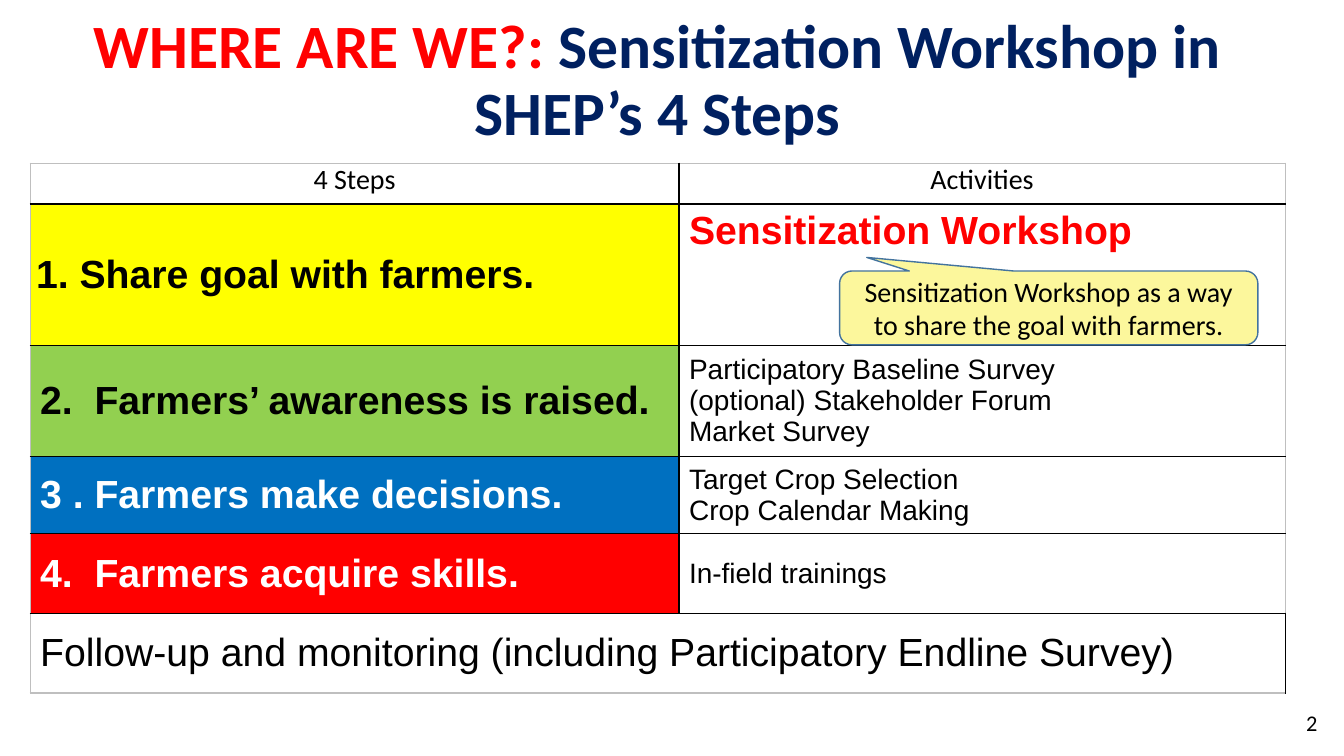
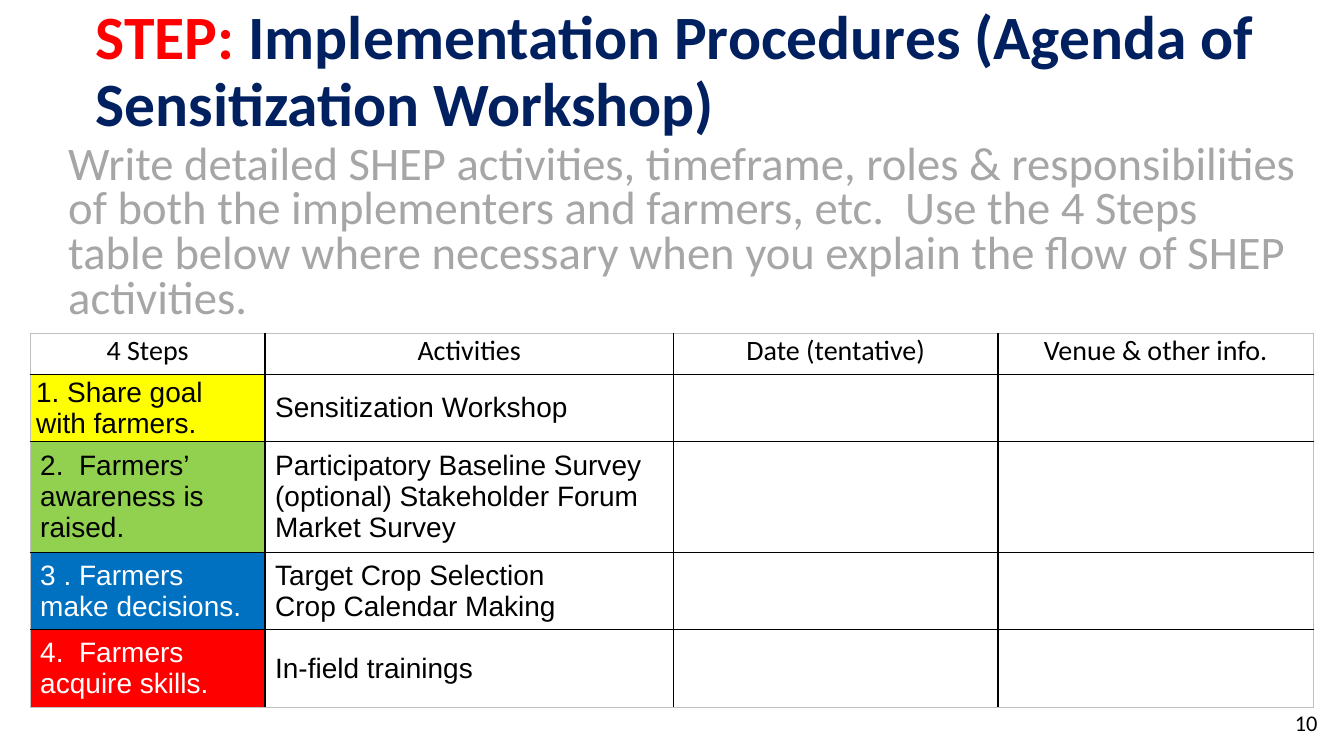
from lxml.etree import SubElement
from pptx import Presentation
from pptx.dml.color import RGBColor
from pptx.enum.shapes import MSO_SHAPE as SHAPE
from pptx.enum.text import MSO_ANCHOR as ANCHOR, PP_ALIGN as ALIGN
from pptx.oxml.ns import qn
from pptx.util import Cm, Pt

# Shared look
COLORS = {
    "black": "000000", "white": "FFFFFF", "red": "FF0000", "navy": "002060",
    "yellow": "FFFF00", "green": "92D050", "blue": "0070C0", "gray": "A6A6A6",
    "edge": "BFBFBF", "note": "FCF79C", "note_line": "43739E",
}
TITLE = {"name": "Calibri", "size": Pt(44), "bold": True}
PROMPT = {"name": "Calibri", "size": Pt(33.3), "bold": False}
LABEL = {"name": "Calibri", "size": Pt(20), "bold": False}
NUMBER = {"name": "Calibri", "size": Pt(16), "bold": False}
BODY = {"name": "Arial", "size": Pt(20), "bold": False}
STRONG = {"name": "Arial", "size": Pt(28), "bold": True}
LARGE = {"name": "Arial", "size": Pt(28), "bold": False}
TIGHT = {"margin_left": Cm(0.15), "margin_right": Cm(0.15),
         "margin_top": 0, "margin_bottom": 0}

# The four steps: text, fill, text colour, activities
STEPS = [
    ("1. Share goal with farmers.", "yellow", "black",
     ["Sensitization Workshop"]),
    ("2.  Farmers’ awareness is raised.", "green", "black",
     ["Participatory Baseline Survey", "(optional) Stakeholder Forum",
      "Market Survey"]),
    ("3 . Farmers make decisions.", "blue", "white",
     ["Target Crop Selection", "Crop Calendar Making"]),
    ("4.  Farmers acquire skills.", "red", "white", ["In-field trainings"]),
]


def rgb(name):
    return RGBColor.from_string(COLORS[name])


def set_attrs(target, values):
    for key, value in values.items():
        setattr(target, key, value)


def add_run(p, text, font, color="black"):
    r = p.add_run()
    r.text = text
    set_attrs(r.font, font)
    r.font.color.rgb = rgb(color)


def write_lines(tf, lines, font, color="black", align=ALIGN.LEFT):
    for i, line in enumerate(lines):
        p = tf.add_paragraph() if i else tf.paragraphs[0]
        p.alignment = align
        add_run(p, line, font, color)


def add_box(s, left, top, width, height, anchor=ANCHOR.MIDDLE):
    tf = s.shapes.add_textbox(Cm(left), Cm(top), Cm(width), Cm(height)).text_frame
    tf.word_wrap = True
    tf.vertical_anchor = anchor
    return tf


# Title with a red lead, and page number
def add_slide(prs, lead, title, number, box, align):
    s = prs.slides.add_slide(prs.slide_layouts[6])
    p = add_box(s, *box).paragraphs[0]
    set_attrs(p, {"alignment": align, "line_spacing": 0.9})
    add_run(p, lead, TITLE, "red")
    add_run(p, title, TITLE, "navy")
    write_lines(add_box(s, 25.83, 17.7, 7.62, 1.02), [number], NUMBER,
                align=ALIGN.RIGHT)
    return s


# Tables: black rules inside, gray frame outside
def set_borders(cell, outer):
    tc_pr = cell._tc.get_or_add_tcPr()
    for side in "LRTB":
        ln = SubElement(tc_pr, qn(f"a:ln{side}"), w=str(Pt(1)))
        fill = SubElement(ln, qn("a:solidFill"))
        SubElement(fill, qn("a:srgbClr"),
                   val=COLORS["edge" if side in outer else "black"])


def add_grid(s, top, widths, heights, headers):
    table = s.shapes.add_table(len(heights), len(widths), Cm(0.76), Cm(top),
                               Cm(sum(widths)), Cm(sum(heights))).table
    set_attrs(table, {"first_row": False, "horz_banding": False})
    for col, width in zip(table.columns, widths):
        col.width = Cm(width)
    for row, height in zip(table.rows, heights):
        row.height = Cm(height)
    last_row, last_col = len(heights) - 1, len(widths) - 1
    for i in range(last_row + 1):
        for j in range(last_col + 1):
            cell = table.cell(i, j)
            edges = {"T": i == 0, "B": i == last_row,
                     "L": j == 0, "R": j == last_col}
            set_borders(cell, [side for side, hit in edges.items() if hit])
            cell.fill.background()
            cell.vertical_anchor = ANCHOR.MIDDLE if i else ANCHOR.TOP
    for j, header in enumerate(headers):
        set_attrs(table.cell(0, j), TIGHT)
        write_lines(table.cell(0, j).text_frame, [header], LABEL,
                    align=ALIGN.CENTER)
    return table


def fill_steps(table, step_font, first_font=BODY, first_color="black"):
    set_attrs(table.cell(1, 0), TIGHT)
    for i, (step, fill, color, activities) in enumerate(STEPS, 1):
        cell = table.cell(i, 0)
        cell.fill.solid()
        cell.fill.fore_color.rgb = rgb(fill)
        write_lines(cell.text_frame, [step], step_font, color)
        font, ink = (first_font, first_color) if i == 1 else (BODY, "black")
        write_lines(table.cell(i, 1).text_frame, activities, font, ink)


def add_callout(s, text):
    sp = s.shapes.add_shape(SHAPE.ROUNDED_RECTANGULAR_CALLOUT,
                            Cm(21.16), Cm(6.83), Cm(10.54), Cm(1.86))
    for i, value in enumerate((-0.435, -0.684, 0.167)):
        sp.adjustments[i] = value
    sp.shadow.inherit = False
    sp.fill.solid()
    sp.fill.fore_color.rgb = rgb("note")
    sp.line.color.rgb = rgb("note_line")
    sp.line.width = Pt(1)
    tf = sp.text_frame
    set_attrs(tf, {"word_wrap": True, "vertical_anchor": ANCHOR.MIDDLE})
    write_lines(tf, [text], LABEL, align=ALIGN.CENTER)


def build_overview(prs):
    s = add_slide(prs, "WHERE ARE WE?: ",
                  "Sensitization Workshop in SHEP’s 4 Steps", "2",
                  (0.2, 0.23, 32.74, 3.68), ALIGN.CENTER)
    table = add_grid(s, 4.11, [16.35, 15.28], [1.03, 3.56, 2.6, 1.83, 2.01, 2.01],
                     ["4 Steps", "Activities"])
    fill_steps(table, STRONG, STRONG, "red")
    table.cell(1, 1).vertical_anchor = ANCHOR.TOP
    follow_up = table.cell(5, 0)
    follow_up.merge(table.cell(5, 1))
    write_lines(follow_up.text_frame,
                ["Follow-up and monitoring (including Participatory Endline Survey)"],
                LARGE)
    add_callout(s, "Sensitization Workshop as a way to share the goal with farmers.")


def build_agenda(prs):
    s = add_slide(prs, "STEP: ",
                  "Implementation Procedures (Agenda of Sensitization Workshop)",
                  "10", (2.16, 0, 30.12, 3.68), ALIGN.LEFT)
    tf = add_box(s, 1.47, 3.51, 31.62, 4.93, ANCHOR.TOP)
    write_lines(tf, ["Write detailed SHEP activities, timeframe, roles & "
                     "responsibilities of both the implementers and farmers, etc.  "
                     "Use the 4 Steps table below where necessary when you explain "
                     "the flow of SHEP activities."], PROMPT, "gray")
    set_attrs(tf.paragraphs[0], {"line_spacing": 0.8, "space_before": Pt(10)})
    table = add_grid(s, 8.41, [5.92, 10.29, 8.18, 7.95], [1.02, 1.6, 2.6, 1.83, 1.83],
                     ["4 Steps", "Activities", "Date (tentative)",
                      "Venue & other info."])
    fill_steps(table, BODY)


def main():
    prs = Presentation()
    set_attrs(prs, {"slide_width": Cm(33.87), "slide_height": Cm(19.05)})
    build_overview(prs)
    build_agenda(prs)
    prs.save("out.pptx")


if __name__ == "__main__":
    main()
